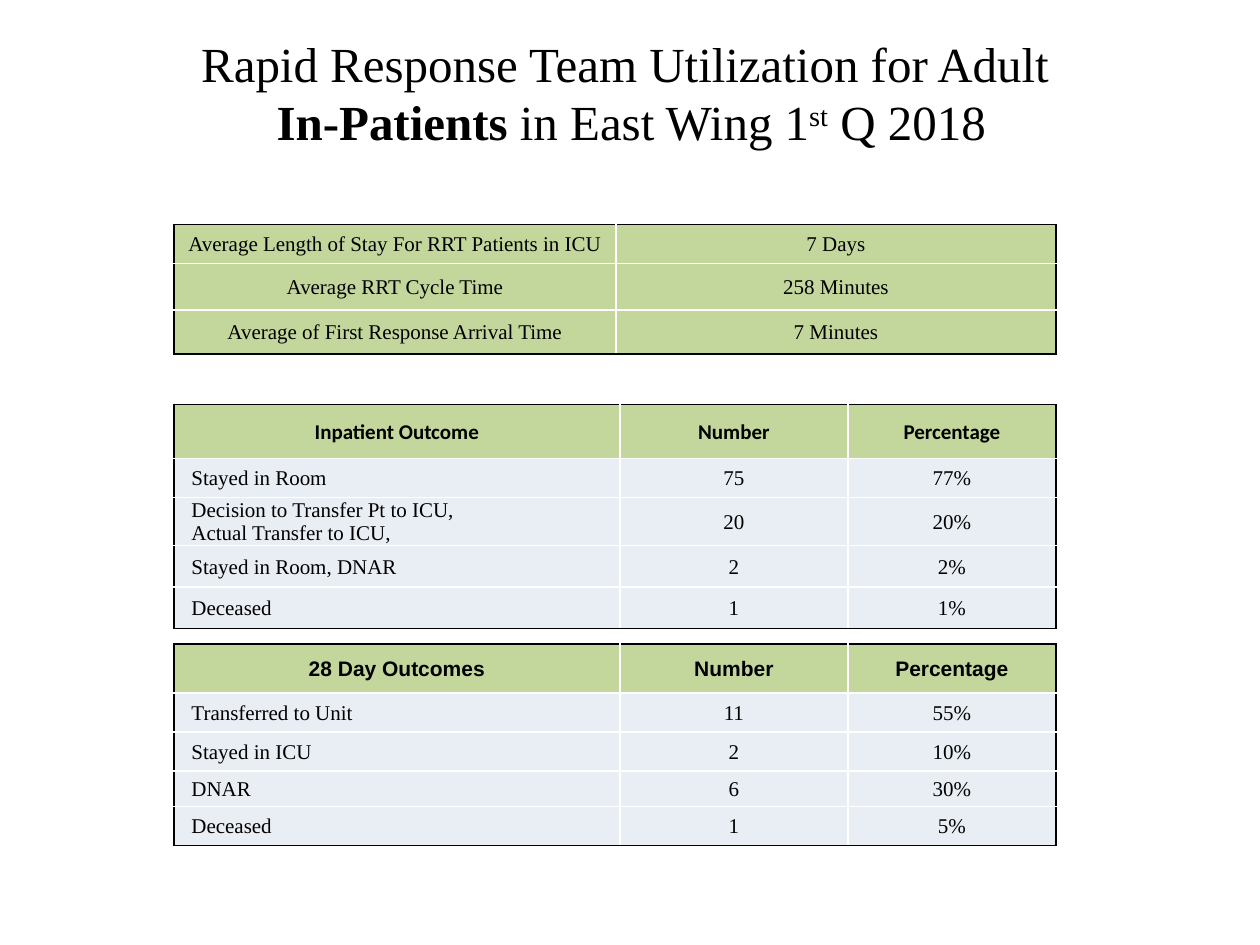
import pptx
import pptx.dml.color
import pptx.enum.text
import pptx.oxml
import pptx.oxml.ns
import pptx.util

Inches, Pt = pptx.util.Inches, pptx.util.Pt
RGBColor = pptx.dml.color.RGBColor
CENTER = pptx.enum.text.PP_ALIGN.CENTER
LEFT = pptx.enum.text.PP_ALIGN.LEFT
MIDDLE = pptx.enum.text.MSO_ANCHOR.MIDDLE

BLACK = RGBColor(0x00, 0x00, 0x00)
WHITE = RGBColor(0xFF, 0xFF, 0xFF)
GREEN = RGBColor(0xC3, 0xD6, 0x9B)
PALE = RGBColor(0xE9, 0xED, 0xF4)
SERIF = "Times New Roman"

TABLE_LEFT = 1.38
OUTCOME_COLS = [3.54, 1.81, 1.65]

TITLE = [
    [("Rapid Response Team Utilization for Adult ", {})],
    [("In-Patients", {"bold": True}), (" in East Wing 1", {}),
     ("st", {"baseline": 30000}), (" Q 2018", {})],
]
AVERAGES = [
    ["Average Length of Stay For RRT Patients in ICU", "7 Days"],
    ["Average RRT Cycle Time", "258 Minutes"],
    ["Average of First Response Arrival Time", "7 Minutes"],
]
INPATIENT = [
    ["Inpatient Outcome", "Number", "Percentage"],
    ["Stayed in Room", "75", "77%"],
    ["Decision to Transfer Pt to ICU,\nActual Transfer to ICU,", "20", "20%"],
    ["Stayed in Room, DNAR", "2", "2%"],
    ["Deceased", "1", "1%"],
]
DAY_28 = [
    ["28 Day Outcomes", "Number", "Percentage"],
    ["Transferred to Unit", "11", "55%"],
    ["Stayed in ICU", "2", "10%"],
    ["DNAR", "6", "30%"],
    ["Deceased", "1", "5%"],
]


class Deck:
    def __init__(self, prs):
        self.s = prs.slides.add_slide(prs.slide_layouts[6])
        self.body = {"name": SERIF, "size": Pt(12), "bold": False}
        self.heading = {"name": SERIF, "size": Pt(28), "bold": False}

    def run(self, p, text, style, baseline=None):
        r = p.add_run()
        r.text = text
        for name, value in style.items():
            setattr(r.font, name, value)
        r.font.color.rgb = BLACK
        if baseline:
            r.font._element.set("baseline", str(baseline))

    def title(self, lines, left, top, width, height):
        tf = self.s.shapes.add_textbox(
            Inches(left), Inches(top), Inches(width), Inches(height)).text_frame
        tf.word_wrap = True
        tf.vertical_anchor = MIDDLE
        for i, line in enumerate(lines):
            p = tf.add_paragraph() if i else tf.paragraphs[0]
            p.alignment = CENTER
            for text, extra in line:
                style = {**self.heading, "bold": extra.get("bold", False)}
                self.run(p, text, style, extra.get("baseline"))

    def borders(self, cell, colors):
        """Draw 1 pt cell borders; colors maps the sides L, R, T, B in that order."""
        tc_pr = cell._tc.get_or_add_tcPr()
        for side, color in colors.items():
            tc_pr.append(pptx.oxml.parse_xml(
                f'<a:ln{side} {pptx.oxml.ns.nsdecls("a")} w="{Pt(1)}"><a:solidFill>'
                f'<a:srgbClr val="{color}"/></a:solidFill></a:ln{side}>'))

    def cell(self, cell, text, fill, style, indent=0):
        margins = {"margin_left": 0.01, "margin_top": 0.01,
                   "margin_right": 0.01, "margin_bottom": 0}
        for name, value in margins.items():
            setattr(cell, name, Inches(value))
        cell.vertical_anchor = MIDDLE
        cell.fill.solid()
        cell.fill.fore_color.rgb = fill
        tf = cell.text_frame
        for i, line in enumerate(text.split("\n")):
            p = tf.add_paragraph() if i else tf.paragraphs[0]
            p.alignment = LEFT if indent else CENTER
            if indent:
                p._p.get_or_add_pPr().set("marL", str(Inches(indent)))
            self.run(p, line, style)

    def table(self, rows, top, widths, heights, header_font=None):
        """Black outside, white inside; header_font marks a table with a header row."""
        table = self.s.shapes.add_table(
            len(rows), len(widths), Inches(TABLE_LEFT), Inches(top),
            Inches(sum(widths)), Inches(sum(heights))).table
        table.first_row = table.horz_banding = False
        for column, width in zip(table.columns, widths):
            column.width = Inches(width)
        for row, height in zip(table.rows, heights):
            row.height = Inches(height)
        last_row, last_col = len(rows) - 1, len(widths) - 1
        for i, row in enumerate(rows):
            for j, text in enumerate(row):
                cell = table.cell(i, j)
                edges = {"L": j == 0, "R": j == last_col,
                         "T": i == 0, "B": i == last_row}
                self.borders(cell, {side: BLACK if outer else WHITE
                                    for side, outer in edges.items()})
                if header_font and i == 0:
                    style = {**self.body, "name": header_font, "bold": True}
                    self.cell(cell, text, GREEN, style)
                elif header_font:
                    self.cell(cell, text, PALE, self.body, 0 if j else 0.13)
                else:
                    self.cell(cell, text, GREEN, self.body)


def main():
    prs = pptx.Presentation()
    prs.slide_width, prs.slide_height = Inches(10), Inches(7.5)
    deck = Deck(prs)
    deck.table(AVERAGES, 1.78, [3.51, 3.49], [0.31, 0.37, 0.35])
    deck.table(INPATIENT, 3.21, OUTCOME_COLS, [0.43, 0.31, 0.38, 0.33, 0.33], "Calibri")
    deck.table(DAY_28, 5.11, OUTCOME_COLS, [0.39, 0.31, 0.31, 0.28, 0.31], "Arial")
    deck.title(TITLE, 0.51, 0.21, 9, 1.04)
    prs.save("out.pptx")


if __name__ == "__main__":
    main()
